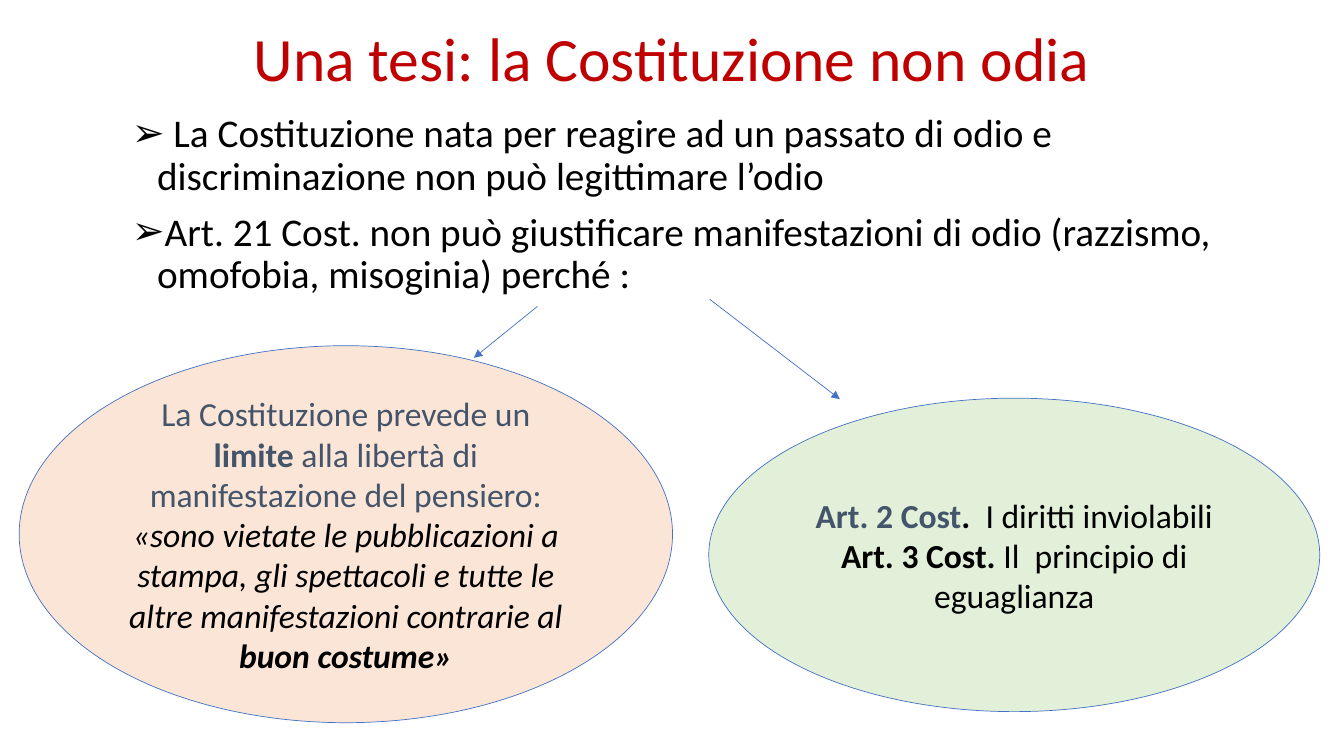
import functools
from dataclasses import dataclass

import lxml.etree
import pptx
import pptx.dml.color
import pptx.enum.shapes
import pptx.enum.text
import pptx.oxml.ns
import pptx.util

Inches = pptx.util.Inches
Pt = pptx.util.Pt
ALIGN = pptx.enum.text.PP_ALIGN
ANCHOR = pptx.enum.text.MSO_ANCHOR


@dataclass(frozen=True)
class Theme:
    font: str = "Calibri"
    title_size: int = 44
    body_size: int = 28
    oval_size: int = 24
    line_width: float = 0.5
    title: str = "C00000"
    text: str = "000000"
    slate: str = "44546A"
    outline: str = "4472C4"
    peach: str = "FBE5D6"
    green: str = "E2F0D9"


@dataclass(frozen=True)
class Span:
    text: str
    color: str
    bold: bool = False
    italic: bool = False


def rgb(value):
    return pptx.dml.color.RGBColor.from_string(value)


def add_xml(parent, tag, **attributes):
    return lxml.etree.SubElement(parent, pptx.oxml.ns.qn(tag), attributes)


class SlideBuilder:
    def __init__(self, slide, theme):
        self.shapes = slide.shapes
        self.theme = theme

    def fill_text(self, frame, paragraphs, size, align, anchor):
        """Fill a text frame; each paragraph is a list of spans."""
        frame.word_wrap = True
        frame.vertical_anchor = anchor
        for index, spans in enumerate(paragraphs):
            paragraph = frame.paragraphs[0] if index == 0 else frame.add_paragraph()
            paragraph.alignment = align
            for span in spans:
                run = paragraph.add_run()
                run.text = span.text
                run.font.name = self.theme.font
                run.font.size = Pt(size)
                run.font.bold = span.bold
                run.font.italic = span.italic
                run.font.color.rgb = rgb(span.color)

    def text_box(self, box, paragraphs, size, align, anchor):
        frame = self.shapes.add_textbox(*map(Inches, box)).text_frame
        self.fill_text(frame, paragraphs, size, align, anchor)
        for paragraph in frame.paragraphs:
            paragraph.line_spacing = 0.9
        return frame

    def title(self, box, text):
        spans = [Span(text, self.theme.title)]
        self.text_box(box, [spans], self.theme.title_size, ALIGN.CENTER, ANCHOR.MIDDLE)

    def bullets(self, box, items):
        paragraphs = [[Span(item, self.theme.text)] for item in items]
        frame = self.text_box(box, paragraphs, self.theme.body_size, ALIGN.LEFT, ANCHOR.TOP)
        for paragraph in frame.paragraphs:
            paragraph.space_before = Pt(10)
            properties = paragraph._p.get_or_add_pPr()
            properties.set("marL", str(Inches(0.25)))
            properties.set("indent", str(Inches(-0.25)))
            add_xml(properties, "a:buFont", typeface="Arial")
            add_xml(properties, "a:buChar", char="➢")

    def oval(self, box, fill, paragraphs):
        oval = self.shapes.add_shape(pptx.enum.shapes.MSO_SHAPE.OVAL, *map(Inches, box))
        oval.shadow.inherit = False
        oval.fill.solid()
        oval.fill.fore_color.rgb = rgb(fill)
        self.outline(oval.line)
        self.fill_text(oval.text_frame, paragraphs, self.theme.oval_size,
                       ALIGN.CENTER, ANCHOR.MIDDLE)

    def arrow(self, start, end):
        arrow = self.shapes.add_connector(
            pptx.enum.shapes.MSO_CONNECTOR.STRAIGHT, *map(Inches, start + end))
        self.outline(arrow.line)
        add_xml(arrow.line._get_or_add_ln(), "a:tailEnd", type="triangle")
        add_xml(arrow._element.spPr, "a:effectLst")

    def outline(self, line):
        line.color.rgb = rgb(self.theme.outline)
        line.width = Pt(self.theme.line_width)


def main():
    deck = pptx.Presentation()
    deck.slide_width, deck.slide_height = Inches(13.33), Inches(7.5)
    theme = Theme()
    builder = SlideBuilder(deck.slides.add_slide(deck.slide_layouts[6]), theme)
    slate = functools.partial(Span, color=theme.slate)
    black = functools.partial(Span, color=theme.text)

    builder.title((1.11, 0.17, 11.11, 0.89), "Una tesi: la Costituzione non odia")
    builder.bullets((1.21, 1.08, 11.01, 5.34), [
        " La Costituzione nata per reagire ad un passato di odio e "
        "discriminazione non può legittimare l’odio",
        "Art. 21 Cost. non può giustificare manifestazioni di odio "
        "(razzismo, omofobia, misoginia) perché :",
    ])
    builder.oval((7.03, 3.95, 6.06, 3.11), theme.green, [
        [slate("Art. 2 Cost", bold=True), black(".  ", bold=True),
         black("I diritti inviolabili")],
        [black("Art. 3 Cost. ", bold=True), black("Il  principio di eguaglianza")],
    ])
    builder.oval((0.19, 3.43, 6.48, 3.74), theme.peach, [
        [slate("La Costituzione prevede un "), slate("limite", bold=True),
         slate(" alla libertà di manifestazione del pensiero:")],
        [black("«sono vietate le pubblicazioni a stampa, gli spettacoli e tutte le "
               "altre manifestazioni contrarie al ", italic=True),
         black("buon costume»", bold=True, italic=True)],
    ])
    builder.arrow((5.33, 3.04), (4.7, 3.55))
    builder.arrow((7.04, 2.97), (8.33, 3.96))
    deck.save("out.pptx")


if __name__ == "__main__":
    main()
